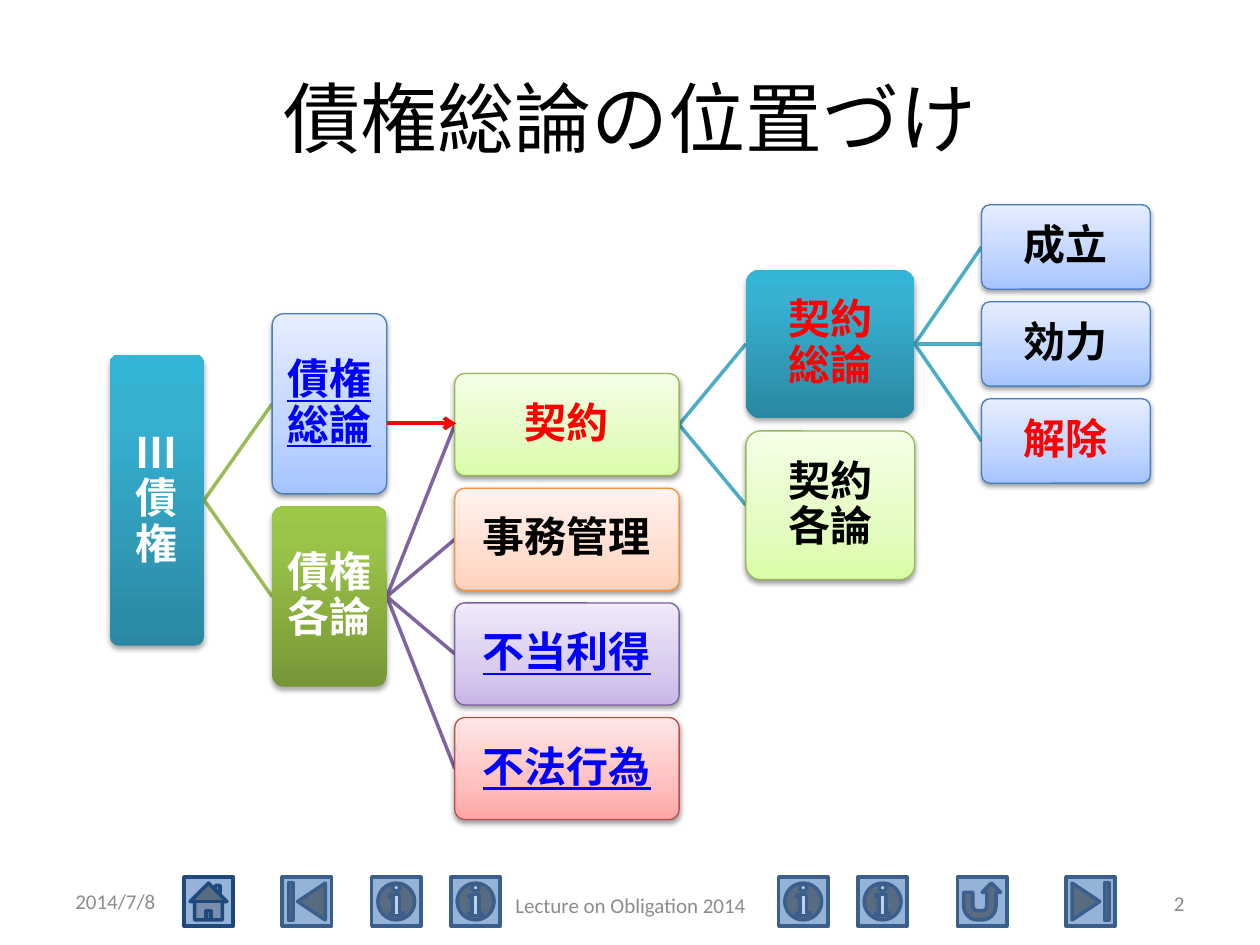
from dataclasses import dataclass
from typing import Any

from pptx import Presentation
from pptx.dml.color import RGBColor
from pptx.enum.shapes import MSO_CONNECTOR, MSO_SHAPE as Preset
from pptx.enum.text import MSO_ANCHOR as Anchor, PP_ALIGN as Align
from pptx.oxml import parse_xml
from pptx.oxml.ns import nsdecls, qn
from pptx.util import Inches, Pt

ROOT_MIDDLE = 3.97
SIBLING_GAP = 0.1
BUTTON_TOP, BUTTON_SIZE = 6.96, 0.39


@dataclass(frozen=True)
class Style:
    stops: tuple[tuple[int, str], ...]
    border: str | None = None


@dataclass(frozen=True)
class Level:
    left: float
    width: float
    height: float
    link: str = ""


@dataclass(frozen=True)
class Topic:
    label: str
    style: Style
    ink: str = "000000"
    underline: bool = False
    children: tuple["Topic", ...] = ()


@dataclass(frozen=True)
class Button:
    preset: Preset
    left: float
    border: str = "3A5F8C"


@dataclass(frozen=True)
class Footer:
    wording: str
    left: float
    top: float
    width: float
    align: Align


def pale(low: str, middle: str, high: str, border: str) -> Style:
    return Style(((0, low), (35, middle), (100, high)), border)


TEAL = Style(((0, "2A88A2"), (80, "37B1D2"), (100, "34B4D6")))
OLIVE = Style(((0, "779737"), (80, "9BC348"), (100, "9DC746")))
BLUE = pale("A4C4FF", "BFD4FF", "E6EEFF", "4B7EBC")
GREEN = pale("DAFDA7", "E4FCC2", "F5FFE7", "98B955")
ORANGE = pale("FFD2BD", "FFDED0", "FFF2ED", "F69240")
PURPLE = pale("C9B5E8", "D8CBEE", "F0EAF9", "7D60A0")
RED = pale("FFA6A5", "FFC0BF", "FFE7E7", "BF4C48")

LEVELS = (
    Level(0.87, 0.75, 2.31),
    Level(2.16, 0.91, 1.43, "9BBB59"),
    Level(3.61, 1.78, 0.81, "8064A2"),
    Level(5.92, 1.34, 1.18, "4BACC6"),
    Level(7.79, 1.34, 0.67, "4BACC6"),
)

GENERAL_CONTRACT = Topic("契約\v総論", TEAL, "FF0000", children=(
    Topic("成立", BLUE),
    Topic("効力", BLUE),
    Topic("解除", BLUE, "FF0000"),
))
SPECIFIC_CLAIMS = Topic("債権\v各論", OLIVE, "FFFFFF", children=(
    Topic("契約", GREEN, "FF0000", children=(
        GENERAL_CONTRACT,
        Topic("契約\v各論", GREEN),
    )),
    Topic("事務管理", ORANGE),
    Topic("不当利得", PURPLE, "0000FF", True),
    Topic("不法行為", RED, "0000FF", True),
))
CLAIMS = Topic("Ⅲ\v債\v権", TEAL, "FFFFFF", children=(
    Topic("債権\v総論", BLUE, "0000FF", True),
    SPECIFIC_CLAIMS,
))

BUTTONS = (
    Button(Preset.ACTION_BUTTON_HOME, 1.46, "1F497D"),
    Button(Preset.ACTION_BUTTON_BEGINNING, 2.24),
    *(Button(Preset.ACTION_BUTTON_INFORMATION, left) for left in (2.95, 3.58, 6.18, 6.81)),
    Button(Preset.ACTION_BUTTON_RETURN, 7.6),
    Button(Preset.ACTION_BUTTON_END, 8.46),
)
FOOTERS = (
    Footer("2014/7/8", 0.5, 6.95, 2.33, Align.LEFT),
    Footer("Lecture on Obligation 2014", 3.42, 6.98, 3.17, Align.CENTER),
    Footer("2", 7.17, 6.97, 2.33, Align.RIGHT),
)


def assign(target: Any, values: dict[str, Any]) -> None:
    for name, value in values.items():
        setattr(target, name, value)


def paint(color_format: Any, color: str) -> None:
    color_format.rgb = RGBColor.from_string(color)


def write(frame: Any, wording: str, ink: str, align: Align, **font_values: Any) -> None:
    assign(frame, {"text": wording, "word_wrap": True, "vertical_anchor": Anchor.MIDDLE})
    for paragraph in frame.paragraphs:
        paragraph.alignment = align
        for run in paragraph.runs:
            assign(run.font, {"name": "Calibri", **font_values})
            paint(run.font.color, ink)


def draw_line(slide: Any, start: tuple[float, float], end: tuple[float, float],
              color: str, weight: float, arrow: bool = False) -> None:
    ends = [Inches(value) for value in (*start, *end)]
    connector = slide.shapes.add_connector(MSO_CONNECTOR.STRAIGHT, *ends)
    connector.line.width = Pt(weight)
    paint(connector.line.color, color)
    if arrow:
        connector.line._get_or_add_ln().append(
            parse_xml(f'<a:tailEnd {nsdecls("a")} type="arrow"/>'))
    connector._element.spPr.append(parse_xml(f'<a:effectLst {nsdecls("a")}/>'))


def apply_style(box: Any, style: Style) -> None:
    box.fill.gradient()
    box.fill.gradient_angle = 90
    properties = box._element.spPr
    stops = "".join(f'<a:gs pos="{place * 1000}"><a:srgbClr val="{color}"/></a:gs>'
                    for place, color in style.stops)
    old_stops = properties.find(qn("a:gradFill")).find(qn("a:gsLst"))
    old_stops.getparent().replace(
        old_stops, parse_xml(f'<a:gsLst {nsdecls("a")}>{stops}</a:gsLst>'))
    if style.border:
        box.line.width = Pt(0.75)
        paint(box.line.color, style.border)
    else:
        box.line.fill.background()
    box.shadow.inherit = False
    distance, alpha = (Pt(1.6), 38000) if style.border else (Pt(1.8), 35000)
    properties.find(qn("a:effectLst")).append(parse_xml(
        f'<a:outerShdw {nsdecls("a")} blurRad="{Pt(3.1)}" dist="{distance}" dir="5400000" '
        f'rotWithShape="0"><a:srgbClr val="000000"><a:alpha val="{alpha}"/></a:srgbClr>'
        '</a:outerShdw>'))


def draw_topic(slide: Any, topic: Topic, middle: float, depth: int = 0) -> None:
    level = LEVELS[depth]
    if topic.children:
        branch = LEVELS[depth + 1]
        pitch = branch.height + SIBLING_GAP
        first = middle - pitch * (len(topic.children) - 1) / 2
        for index, child in enumerate(topic.children):
            child_middle = first + index * pitch
            draw_line(slide, (level.left + level.width, middle),
                      (branch.left, child_middle), branch.link, 2)
            draw_topic(slide, child, child_middle, depth + 1)
    box = slide.shapes.add_shape(
        Preset.ROUNDED_RECTANGLE, Inches(level.left), Inches(middle - level.height / 2),
        Inches(level.width), Inches(level.height))
    box.adjustments[0] = 0.1
    apply_style(box, topic.style)
    sides = ("left", "right", "top", "bottom")
    assign(box.text_frame, {f"margin_{side}": Inches(0.04) for side in sides})
    write(box.text_frame, topic.label, topic.ink, Align.CENTER,
          size=Pt(24), bold=True, underline=topic.underline)
    box.text_frame.paragraphs[0].line_spacing = 0.9


def draw_button(slide: Any, button: Button) -> None:
    shape = slide.shapes.add_shape(button.preset, Inches(button.left), Inches(BUTTON_TOP),
                                   Inches(BUTTON_SIZE), Inches(BUTTON_SIZE))
    shape.shadow.inherit = False
    shape.fill.solid()
    paint(shape.fill.fore_color, "95B3D7")
    shape.line.width = Pt(2)
    paint(shape.line.color, button.border)


def draw_footer(slide: Any, footer: Footer) -> None:
    box = slide.shapes.add_textbox(Inches(footer.left), Inches(footer.top),
                                   Inches(footer.width), Inches(0.4))
    write(box.text_frame, footer.wording, "8C8C8C", footer.align, size=Pt(12))


def main() -> None:
    deck = Presentation()
    assign(deck, {"slide_width": Inches(10), "slide_height": Inches(7.5)})
    slide = deck.slides.add_slide(deck.slide_layouts[5])
    title = slide.shapes.title
    assign(title, {"left": Inches(0.5), "top": Inches(0.3),
                   "width": Inches(9), "height": Inches(1.25)})
    write(title.text_frame, "債権総論の位置づけ", "000000", Align.CENTER, size=Pt(44))
    for button in BUTTONS:
        draw_button(slide, button)
    draw_topic(slide, CLAIMS, ROOT_MIDDLE)
    for footer in FOOTERS:
        draw_footer(slide, footer)
    draw_line(slide, (3.07, 3.36), (3.62, 3.36), "FF0000", 2.25, arrow=True)
    deck.save("out.pptx")


if __name__ == "__main__":
    main()
